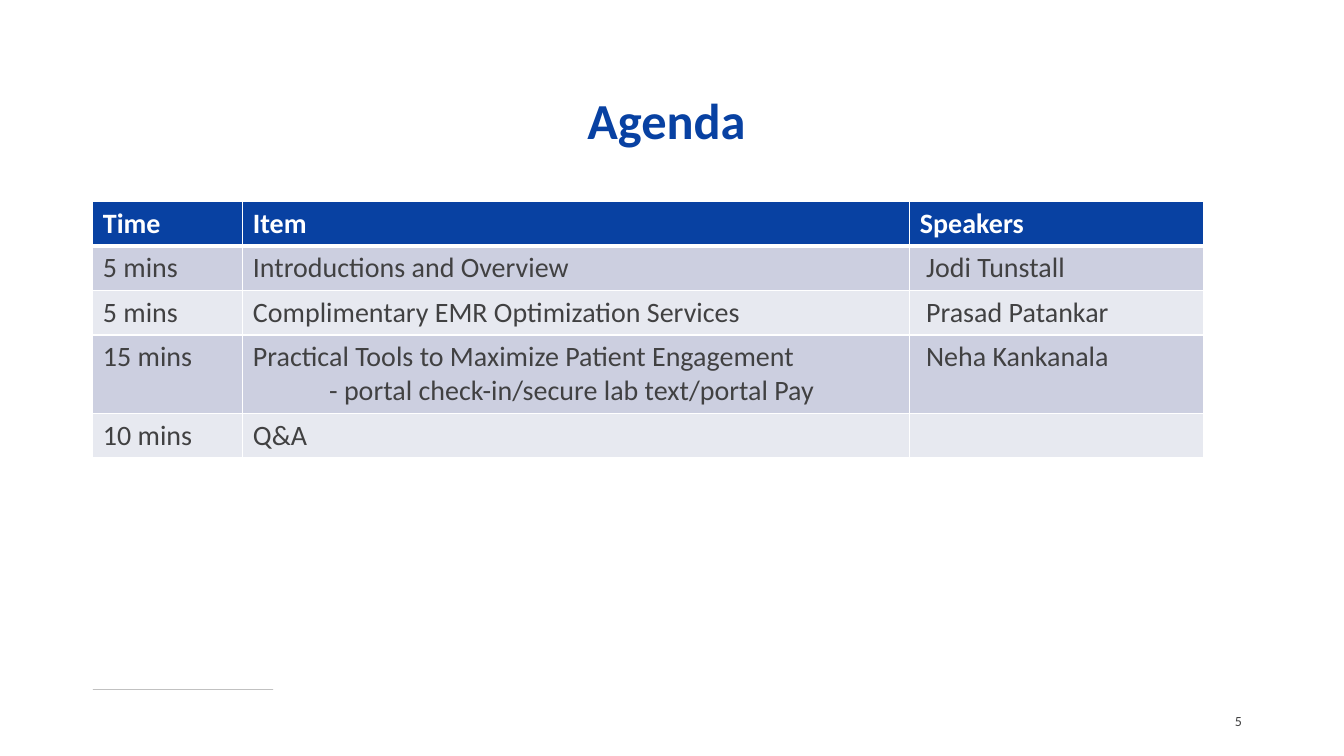
from lxml.etree import SubElement
from pptx import Presentation
from pptx.dml.color import RGBColor
from pptx.enum.shapes import MSO_CONNECTOR
from pptx.enum.text import MSO_ANCHOR, PP_ALIGN
from pptx.oxml.ns import qn
from pptx.util import Cm, Pt

TITLE = "Agenda"
PAGE = "5"
ROWS = [
    ("Time", "Item", "Speakers"),
    ("5 mins", "Introductions and Overview", "Jodi Tunstall"),
    ("5 mins", "Complimentary EMR Optimization Services", "Prasad Patankar"),
    ("15 mins", ("Practical Tools to Maximize Patient Engagement",
                 "- portal check-in/secure lab text/portal Pay"), "Neha Kankanala"),
    ("10 mins", "Q&A", ""),
]
COL_WIDTHS = [3.78, 16.81, 7.4]
ROW_HEIGHTS = [1.12, 1.12, 1.12, 1.98, 1.12]
LEFT = 2.34
BLUE, GREY, WHITE = "0841A2", "414142", "FFFFFF"
BANDS = ["E7E9F0", "CCCFE0"]


def rgb(color):
    return RGBColor.from_string(color)


def write(p, text, size=20, color=GREY, bold=False, align=PP_ALIGN.LEFT, indent=0):
    p.alignment = align
    if indent:
        p._p.get_or_add_pPr().set("marL", str(Cm(indent)))
    if not text:
        p.font.size = Pt(size)
        return
    r = p.add_run()
    r.text = text
    r.font.name = "Calibri"
    r.font.size = Pt(size)
    r.font.bold = bold
    r.font.color.rgb = rgb(color)


def border(cell, side, width):
    ln = SubElement(cell._tc.get_or_add_tcPr(), qn(f"a:ln{side}"), w=str(Pt(width)))
    fill = SubElement(ln, qn("a:solidFill"))
    SubElement(fill, qn("a:srgbClr"), val=WHITE)


def add_agenda(s):
    shape = s.shapes.add_table(len(ROWS), len(COL_WIDTHS), Cm(LEFT), Cm(5.08),
                               Cm(sum(COL_WIDTHS)), Cm(sum(ROW_HEIGHTS)))
    table = shape.table
    for col, width in zip(table.columns, COL_WIDTHS):
        col.width = Cm(width)
    for row, height in zip(table.rows, ROW_HEIGHTS):
        row.height = Cm(height)
    for i, row in enumerate(ROWS):
        header = i == 0
        for j, content in enumerate(row):
            cell = table.cell(i, j)
            for side in "LRTB":
                under_header = (i, side) in [(0, "B"), (1, "T")]
                border(cell, side, 3 if under_header else 1)
            cell.fill.solid()
            cell.fill.fore_color.rgb = rgb(BLUE if header else BANDS[i % 2])
            if j == 2 and not header:
                cell.margin_left = Cm(0.41)
            lines = [content] if isinstance(content, str) else content
            tf = cell.text_frame
            for n, line in enumerate(lines):
                p = tf.add_paragraph() if n else tf.paragraphs[0]
                write(p, line, color=WHITE if header else GREY, bold=header,
                      indent=1.92 if n else 0)


def add_divider(s):
    line = s.shapes.add_connector(MSO_CONNECTOR.STRAIGHT, Cm(LEFT), Cm(17.37),
                                  Cm(6.88), Cm(17.37))
    line.line.width = Pt(0.25)
    line.line.color.rgb = rgb(GREY)
    color = line.line._ln.find(".//" + qn("a:srgbClr"))
    SubElement(color, qn("a:alpha"), val="50000")
    SubElement(line._element.spPr, qn("a:effectLst"))


def main():
    prs = Presentation()
    prs.slide_width, prs.slide_height = Cm(33.87), Cm(19.05)
    s = prs.slides.add_slide(prs.slide_layouts[5])

    add_divider(s)

    page = s.shapes.add_textbox(Cm(23.93), Cm(17.65), Cm(7.62), Cm(1.02))
    tf = page.text_frame
    tf.word_wrap = True
    tf.vertical_anchor = MSO_ANCHOR.MIDDLE
    write(tf.paragraphs[0], PAGE, size=10, align=PP_ALIGN.RIGHT)

    title = s.shapes.title
    title.left, title.top = Cm(LEFT), Cm(1.02)
    title.width, title.height = Cm(29.21), Cm(3.68)
    tf = title.text_frame
    tf.vertical_anchor = MSO_ANCHOR.MIDDLE
    tf.margin_right = Cm(0.55)
    p = tf.paragraphs[0]
    p.line_spacing = 1.2
    write(p, TITLE, size=36, color=BLUE, bold=True, align=PP_ALIGN.CENTER)

    add_agenda(s)
    prs.save("out.pptx")


if __name__ == "__main__":
    main()
